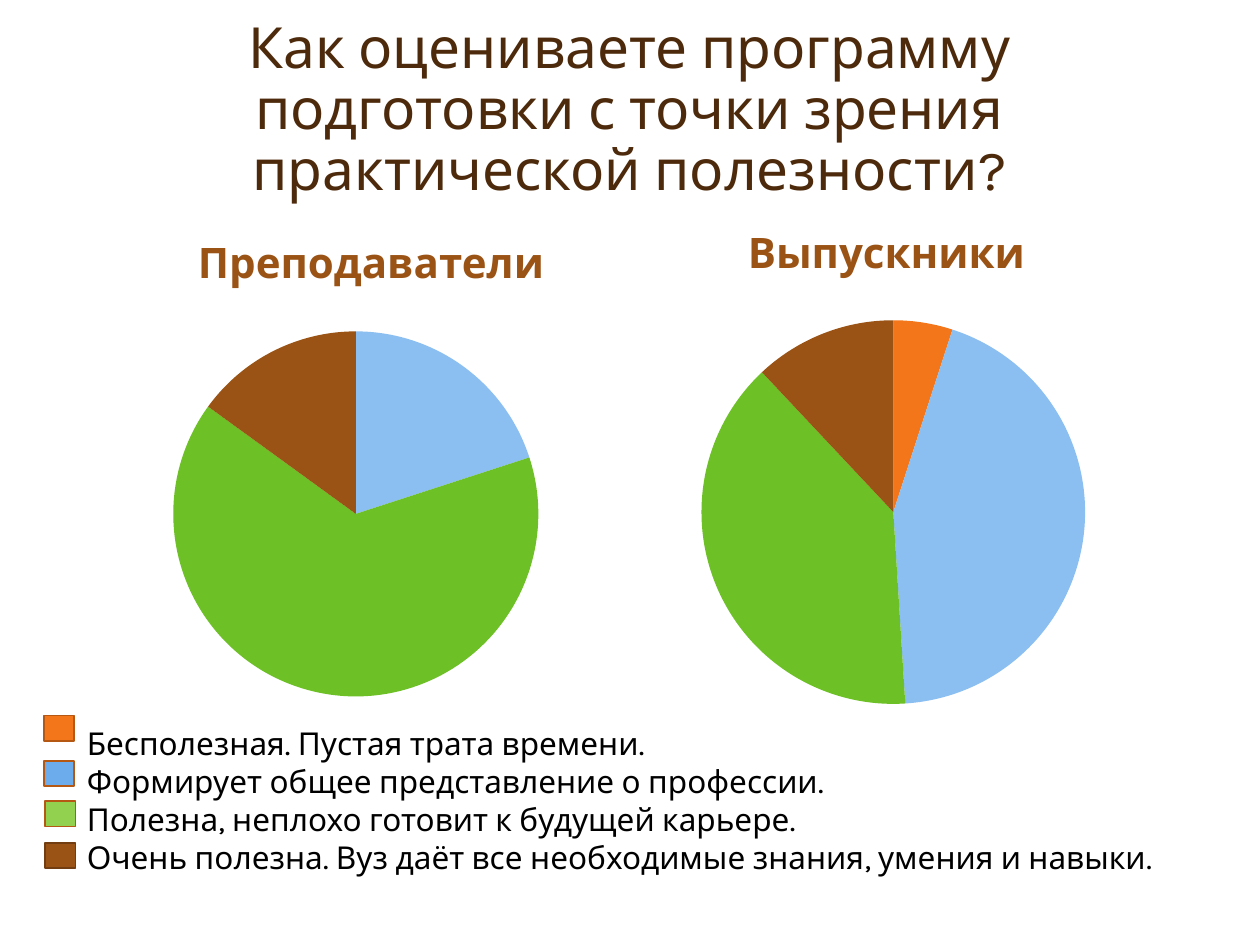
"""Build a survey slide with two pie charts and a shared legend."""
from dataclasses import dataclass

from pptx import Presentation
from pptx import util as u
from pptx.chart.data import CategoryChartData
from pptx.dml.color import RGBColor
from pptx.enum import chart as charts, shapes, text
from pptx.oxml import parse_xml
from pptx.oxml.ns import nsdecls


@dataclass(frozen=True)
class Theme:
    font: str = "Karla"
    title: str = "4D2A0B"
    accent: str = "9A5315"
    body: str = "000000"
    outline: str = "B45813"
    dark_outline: str = "723D10"
    slices: tuple = ("F3771A", "8BBEF1", "6DC025", "9A5315")
    title_size: float = 32.4
    heading_size: float = 24
    body_size: float = 18


theme = Theme()


def style(font, size, color, bold=False):
    font.name = theme.font
    font.size = u.Pt(size)
    font.bold = bold
    font.color.rgb = RGBColor.from_string(color)


def add_text(page, area, lines, size, color, bold=False, heading=True):
    box = page.shapes.add_textbox(*map(u.Inches, area))
    frame = box.text_frame
    frame.word_wrap = True
    frame.vertical_anchor = text.MSO_ANCHOR.BOTTOM if heading else text.MSO_ANCHOR.TOP
    frame.text = "\n".join(lines)
    for para in frame.paragraphs:
        para.alignment = text.PP_ALIGN.CENTER if heading else text.PP_ALIGN.LEFT
        for span in para.runs:
            style(span.font, size, color, bold)
    return box


deck = Presentation()
deck.slide_width, deck.slide_height = u.Inches(10), u.Inches(7.5)
page = deck.slides.add_slide(deck.slide_layouts[6])

title = add_text(
    page, (0.87, 0.33, 8.25, 1.33),
    ["Как оцениваете программу подготовки с точки зрения практической полезности?"],
    theme.title_size, theme.title)
title.text_frame.paragraphs[0].line_spacing = 0.9

groups = [
    ("Преподаватели", (0.91, 1.62, 4.07, 0.71), (1.06, 2.41, 3.46, 3.15),
     (0, 20, 65, 15), (0.05, 0.07, 0.92, 0.92)),
    ("Выпускники", (5, 1.7, 4.07, 0.55), (5.24, 2.41, 3.7, 3.31),
     (5, 44, 39, 12), (0.05, 0.04, 0.9, 0.92)),
]
for name, heading_area, chart_area, values, plot_area in groups:
    add_text(page, heading_area, [name], theme.heading_size, theme.accent, bold=True)
    data = CategoryChartData()
    data.categories = ["1", "2", "3", "4"]
    data.add_series("Series 1", values)
    pie = page.shapes.add_chart(
        charts.XL_CHART_TYPE.PIE, *map(u.Inches, chart_area), data).chart
    pie.has_title = False
    pie.has_legend = False
    style(pie.font, theme.body_size, theme.accent)
    plot = pie.plots[0]
    plot.vary_by_categories = True
    for index, color in enumerate(theme.slices):
        point = plot.series[0].points[index]
        point.format.fill.solid()
        point.format.fill.fore_color.rgb = RGBColor.from_string(color)
        point.format.line.fill.background()
    plot_xml = pie._chartSpace.chart.plotArea
    for old in plot_xml.findall("{*}layout"):
        plot_xml.remove(old)
    places = "".join(
        f'<c:{tag} val="{value}"/>' for tag, value in zip("xywh", plot_area))
    plot_xml.insert(0, parse_xml(
        f'<c:layout {nsdecls("c")}><c:manualLayout><c:layoutTarget val="inner"/>'
        f'<c:xMode val="edge"/><c:yMode val="edge"/>{places}'
        '</c:manualLayout></c:layout>'))

answers = [
    "Бесполезная. Пустая трата времени.",
    "Формирует общее представление о профессии.",
    "Полезна, неплохо готовит к будущей карьере.",
    "Очень полезна. Вуз даёт все необходимые знания, умения и навыки.",
]
add_text(page, (0.59, 5.7, 9.29, 1.31), answers, theme.body_size, theme.body, heading=False)

keys = [
    (0.35, 5.68, theme.slices[0], theme.outline),
    (0.35, 6.04, "6CACEC", theme.outline),
    (0.36, 6.36, "92D050", theme.outline),
    (0.36, 6.69, theme.slices[3], theme.dark_outline),
]
for left, top, fill, outline in keys:
    key = page.shapes.add_shape(
        shapes.MSO_SHAPE.RECTANGLE, *map(u.Inches, (left, top, 0.24, 0.2)))
    key.shadow.inherit = False
    key.fill.solid()
    key.fill.fore_color.rgb = RGBColor.from_string(fill)
    key.line.color.rgb = RGBColor.from_string(outline)
    key.line.width = u.Pt(1)

deck.save("out.pptx")
